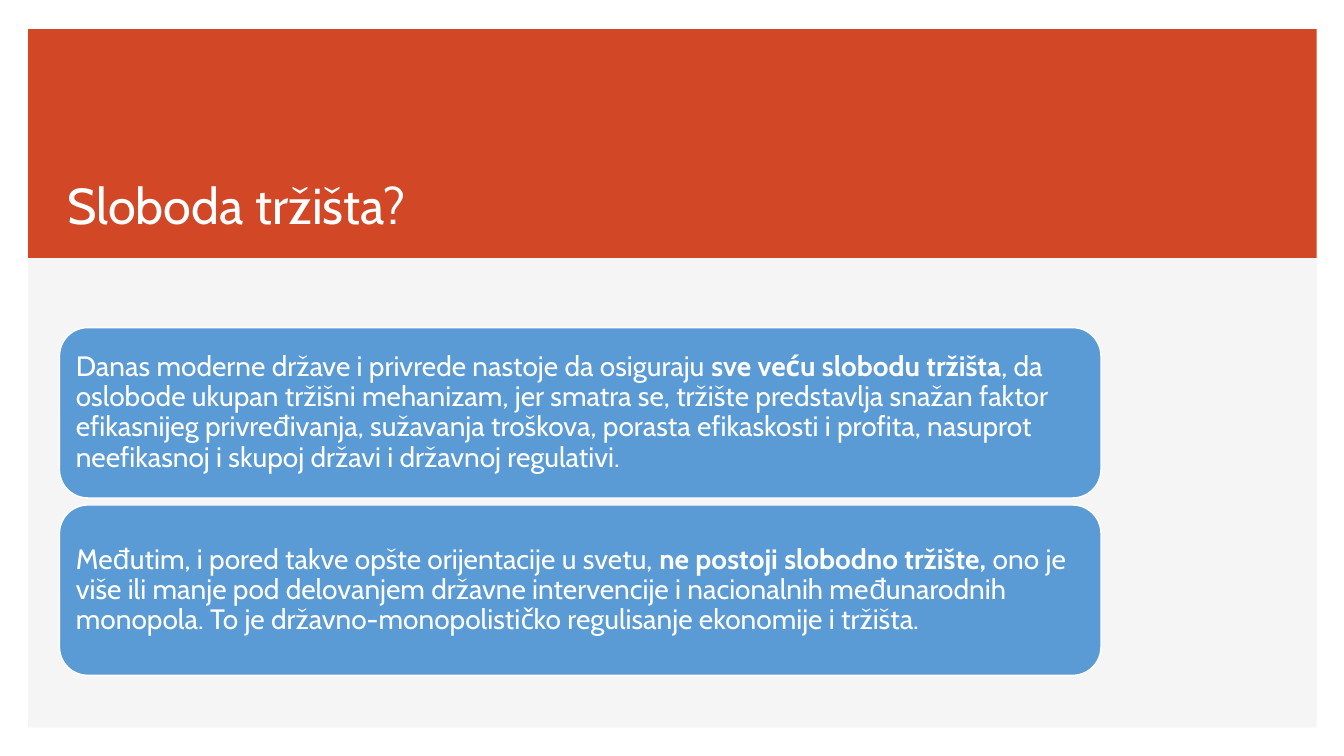
import pptx
import pptx.dml.color
import pptx.enum.shapes
import pptx.enum.text
import pptx.util

Inches = pptx.util.Inches
Pt = pptx.util.Pt
SHAPES = pptx.enum.shapes.MSO_SHAPE
ANCHORS = pptx.enum.text.MSO_ANCHOR
ALIGN = pptx.enum.text.PP_ALIGN

FONT = "Cabin"
WHITE = "FFFFFF"
BLUE = "5B9BD5"
MARGIN_LEFT, MARGIN_TOP, PAGE_WIDTH = 0.28, 0.29, 12.78
CARD_TOP, CARD_PITCH = 3.25, 1.76

STATEMENTS = [
    [
        ("Danas moderne države i privrede nastoje da osiguraju ", False),
        ("sve veću slobodu tržišta", True),
        (", da oslobode ukupan tržišni mehanizam, jer smatra se, tržište "
         "predstavlja snažan faktor efikasnijeg privređivanja, sužavanja "
         "troškova, porasta efikaskosti i profita, nasuprot neefikasnoj i "
         "skupoj državi i državnoj regulativi.", False),
    ],
    [
        ("Međutim, i pored takve opšte orijentacije u svetu, ", False),
        ("ne postoji slobodno tržište, ", True),
        ("ono je više ili manje pod delovanjem državne intervencije i "
         "nacionalnih međunarodnih monopola. To je državno-monopolističko "
         "regulisanje ekonomije i tržišta.", False),
    ],
]


def color(hex_string):
    """Return the RGB colour for a hex string."""
    return pptx.dml.color.RGBColor.from_string(hex_string)


def apply_format(target, values):
    """Set each attribute in values on the target."""
    for attribute, value in values.items():
        setattr(target, attribute, value)


def add_panel(slide, kind, left, top, width, height, fill, outline=None):
    """Add a filled shape, with a thin outline if one is given."""
    panel = slide.shapes.add_shape(
        kind, Inches(left), Inches(top), Inches(width), Inches(height))
    panel.shadow.inherit = False
    panel.fill.solid()
    panel.fill.fore_color.rgb = color(fill)
    if outline:
        panel.line.color.rgb = color(outline)
        panel.line.width = Pt(1)
    else:
        panel.line.fill.background()
    return panel


def write_runs(paragraph, runs, size):
    """Write white runs of (wording, bold) into a paragraph."""
    for wording, bold in runs:
        run = paragraph.add_run()
        run.text = wording
        apply_format(run.font, {"name": FONT, "size": Pt(size), "bold": bold})
        run.font.color.rgb = color(WHITE)


def add_title(slide, wording):
    """Add the slide title at the foot of the red band."""
    title = slide.shapes.add_textbox(
        Inches(0.57), Inches(1.68), Inches(4.27), Inches(0.7))
    apply_format(title.text_frame, {
        "word_wrap": True, "vertical_anchor": ANCHORS.BOTTOM})
    write_runs(title.text_frame.paragraphs[0], [(wording, False)], 36)


def add_statement(slide, top, runs):
    """Add a rounded blue card holding one statement."""
    card = add_panel(slide, SHAPES.ROUNDED_RECTANGLE,
                     0.59, top, 10.33, 1.69, BLUE, WHITE)
    inset = Inches(0.08)
    apply_format(card.text_frame, {
        "word_wrap": True, "vertical_anchor": ANCHORS.MIDDLE,
        "margin_left": inset, "margin_right": inset,
        "margin_top": inset, "margin_bottom": inset})
    paragraph = card.text_frame.paragraphs[0]
    apply_format(paragraph, {
        "alignment": ALIGN.LEFT, "line_spacing": 0.9, "space_after": Pt(7)})
    write_runs(paragraph, runs, 20)


def main():
    """Build and save the slide."""
    deck = pptx.Presentation()
    apply_format(deck, {
        "slide_width": Inches(13.33), "slide_height": Inches(7.5)})
    slide = deck.slides.add_slide(deck.slide_layouts[6])
    for height, fill in ((6.93, "F5F5F5"), (2.27, "D24726")):
        add_panel(slide, SHAPES.RECTANGLE,
                  MARGIN_LEFT, MARGIN_TOP, PAGE_WIDTH, height, fill)
    add_title(slide, "Sloboda tržišta?")
    for index, runs in enumerate(STATEMENTS):
        add_statement(slide, CARD_TOP + index * CARD_PITCH, runs)
    deck.save("out.pptx")


if __name__ == "__main__":
    main()
